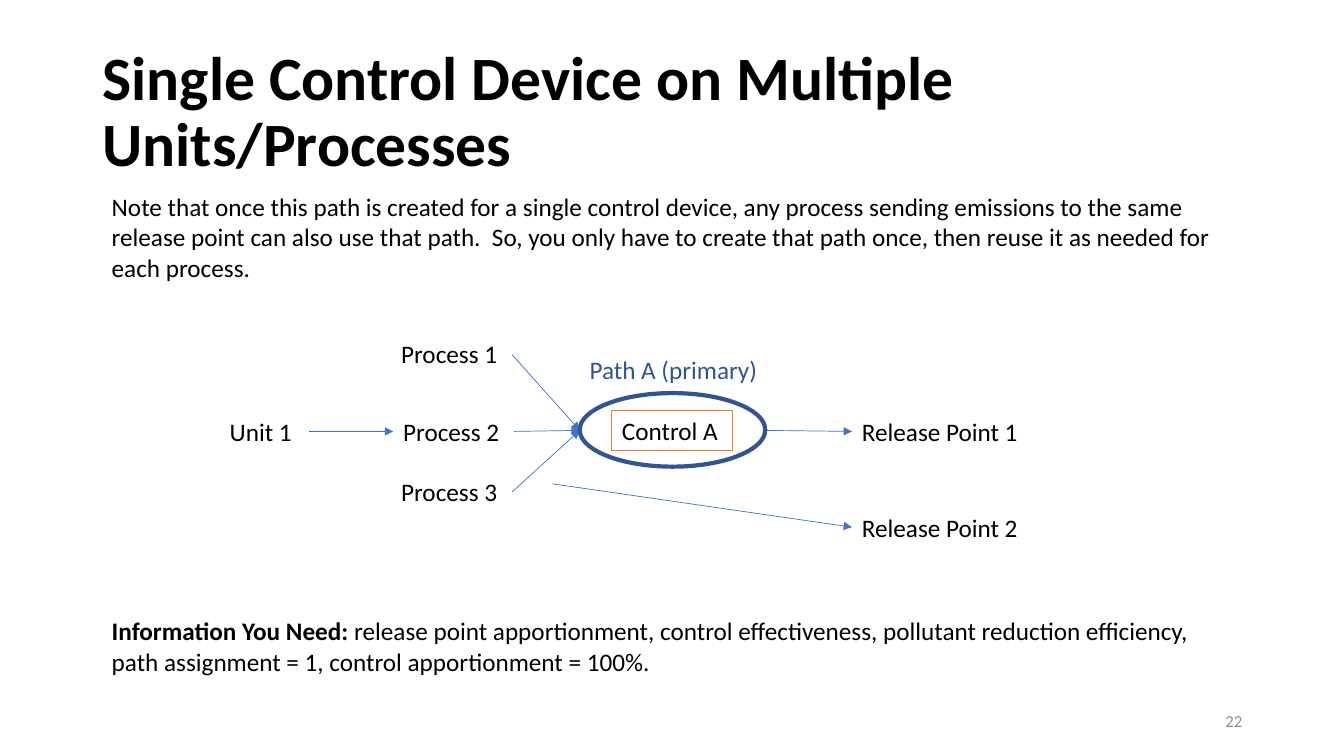
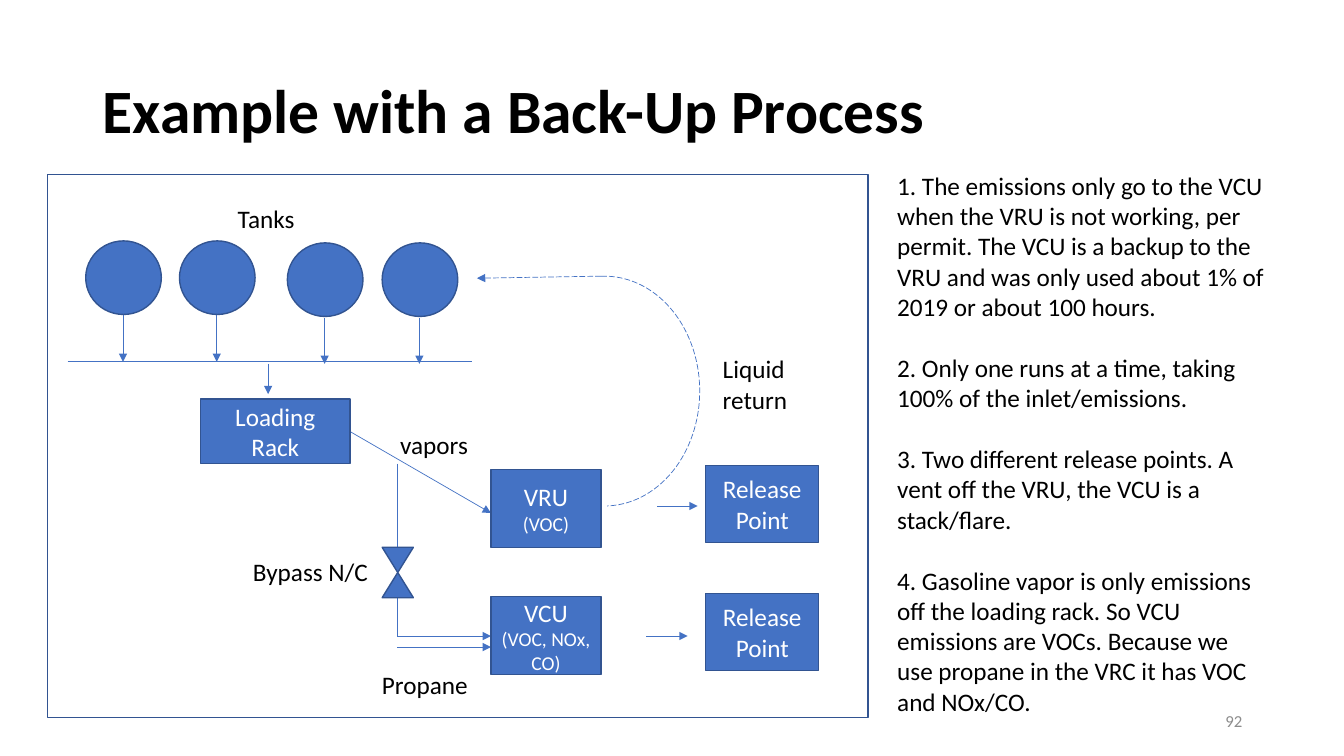
"""Build two slides on emission control paths and a back-up process."""
from lxml import etree
from pptx import Presentation
from pptx.dml.color import RGBColor
from pptx.enum.dml import MSO_LINE
from pptx.enum.shapes import MSO_CONNECTOR, MSO_SHAPE
from pptx.enum.text import MSO_ANCHOR, PP_ALIGN
from pptx.oxml.ns import qn
from pptx.util import Emu, Pt

BLACK = RGBColor(0x00, 0x00, 0x00)
WHITE = RGBColor(0xFF, 0xFF, 0xFF)
GRAY = RGBColor(0x8C, 0x8C, 0x8C)
BLUE = RGBColor(0x44, 0x72, 0xC4)
NAVY = RGBColor(0x32, 0x54, 0x91)
PATH_BLUE = RGBColor(0x2F, 0x55, 0x97)
ORANGE = RGBColor(0xED, 0x7D, 0x31)

FONT = "Calibri"
BODY = 18
SMALL = 14
LINE_GAP = 22
LABEL_H = 40
TANK_W, TANK_H, TANK_DROP = 75, 73, 46

TITLE_BOX = (92, 40, 1150, 145)
NUMBER_BOX = (942, 695, 300, 40)

CONTROL = {
    "title": "Single Control Device on Multiple Units/Processes",
    "number": "22",
    "notes": [
        ((101, 185, 1121, 101), [[
            ("Note that once this path is created for a single control device, any process "
             "sending emissions to the same release point can also use that path.  So, you only "
             "have to create that path once, then reuse it as needed for each process.", {})]]),
        ((101, 606, 1121, 71), [[
            ("Information You Need: ", {"bold": True}),
            ("release point apportionment, control effectiveness, pollutant reduction "
             "efficiency, path assignment = 1, control apportionment = 100%.", {})]]),
    ],
    "labels": [
        ("Unit 1", 218, 408, 89, BLACK),
        ("Process 1", 388, 331, 121, BLACK),
        ("Process 2", 390, 408, 121, BLACK),
        ("Process 3", 388, 468, 121, BLACK),
        ("Path A (primary)", 575, 347, 187, PATH_BLUE),
        ("Release Point 1", 845, 408, 248, BLACK),
        ("Release Point 2", 845, 503, 248, BLACK),
    ],
    "arrows": [
        (306, 428, 390, 428),
        (508, 352, 575, 427),
        (510, 428, 575, 427),
        (508, 488, 575, 427),
        (759, 427, 845, 428),
        (548, 480, 845, 523),
    ],
}

BACKUP = {
    "title": "Example with a Back-Up Process",
    "number": "92",
    "labels": [
        ("Tanks", 226, 197, 94, BLACK),
        ("vapors", 387, 421, 89, BLACK),
        ("Liquid return", 707, 346, 96, BLACK),
        ("Bypass N/C", 241, 547, 146, BLACK),
        ("Propane", 369, 659, 112, BLACK),
    ],
    "arrows": [
        (266, 361, 266, 391),
        (347, 428, 487, 509),
        (652, 502, 692, 502),
        (394, 631, 487, 631),
        (394, 642, 487, 642),
        (641, 631, 682, 631),
    ],
    "tanks": [(85, 239), (178, 239), (285, 241), (379, 241)],
    "units": [
        ((199, 396, 148, 64), [("Loading Rack", {})]),
        ((487, 466, 109, 77), [("VRU ", {}), ("(VOC)", {"size": Pt(SMALL)})]),
        ((487, 592, 109, 77), [("VCU ", {}), ("(VOC, NOx, CO)", {"size": Pt(SMALL)})]),
        ((700, 462, 112, 76), [("Release Point", {})]),
        ((700, 589, 112, 76), [("Release Point", {})]),
    ],
    "remarks": [
        "1. The emissions only go to the VCU when the VRU is not working, per permit. The VCU is "
        "a backup to the VRU and was only used about 1% of 2019 or about 100 hours.",
        "2. Only one runs at a time, taking 100% of the inlet/emissions.",
        "3. Two different release points. A vent off the VRU, the VCU is a stack/flare.",
        "4. Gasoline vapor is only emissions off the loading rack. So VCU emissions are VOCs. "
        "Because we use propane in the VRC it has VOC and NOx/CO.",
    ],
}


def px(*values):
    return [Emu(v * 9144) for v in values]


def write(s, paragraphs, color=BLACK, size=BODY, anchor=MSO_ANCHOR.TOP, gap=0, **layout):
    tf = s.text_frame
    tf.word_wrap = True
    tf.vertical_anchor = anchor
    for i, runs in enumerate(paragraphs):
        p = tf.add_paragraph() if i else tf.paragraphs[0]
        fmt = {"alignment": PP_ALIGN.LEFT, "space_before": Pt(gap if i else 0), **layout}
        for name, value in fmt.items():
            setattr(p, name, value)
        for text, extra in runs:
            r = p.add_run()
            r.text = text
            r.font.color.rgb = color
            for name, value in {"name": FONT, "size": Pt(size), **extra}.items():
                setattr(r.font, name, value)


def add_text(slide, box, paragraphs, **style):
    write(slide.shapes.add_textbox(*px(*box)), paragraphs, **style)


def add_shape(slide, kind, box, fill=None, line=NAVY, width=1.0):
    s = slide.shapes.add_shape(kind, *px(*box))
    s.shadow.inherit = False
    if fill is None:
        s.fill.background()
    else:
        s.fill.solid()
        s.fill.fore_color.rgb = fill
    s.line.color.rgb = line
    s.line.width = Pt(width)
    return s


def add_line(slide, ends, arrow=True, width=0.5, dash=None):
    c = slide.shapes.add_connector(MSO_CONNECTOR.STRAIGHT, *px(*ends))
    c.line.color.rgb = BLUE
    c.line.width = Pt(width)
    if dash:
        c.line.dash_style = dash
    if arrow:
        etree.SubElement(c.line._get_or_add_ln(), qn("a:tailEnd"), type="triangle")
    etree.SubElement(c._element.spPr, qn("a:effectLst"))


def add_slide(prs, content):
    slide = prs.slides.add_slide(prs.slide_layouts[6])
    add_text(slide, NUMBER_BOX, [[(content["number"], {})]], color=GRAY, size=12,
             anchor=MSO_ANCHOR.MIDDLE, alignment=PP_ALIGN.RIGHT)
    add_text(slide, TITLE_BOX, [[(content["title"], {"bold": True})]], size=44,
             anchor=MSO_ANCHOR.MIDDLE, line_spacing=0.9)
    for text, x, y, w, color in content["labels"]:
        add_text(slide, (x, y, w, LABEL_H), [[(text, {})]], color=color)
    for ends in content["arrows"]:
        add_line(slide, ends)
    return slide


def build_control(prs):
    slide = add_slide(prs, CONTROL)
    for box, paragraphs in CONTROL["notes"]:
        add_text(slide, box, paragraphs)
    control = add_shape(slide, MSO_SHAPE.RECTANGLE, (607, 407, 120, 40), line=ORANGE, width=0.75)
    write(control, [[("Control A", {})]])
    add_shape(slide, MSO_SHAPE.OVAL, (575, 390, 184, 73), width=3)


def build_backup(prs):
    slide = add_slide(prs, BACKUP)
    add_shape(slide, MSO_SHAPE.RECTANGLE, (47, 173, 814, 539))
    for x, y in BACKUP["tanks"]:
        add_shape(slide, MSO_SHAPE.OVAL, (x, y, TANK_W, TANK_H), fill=BLUE)
        mid, bottom = x + TANK_W // 2, y + TANK_H + 1
        add_line(slide, (mid, bottom, mid, bottom + TANK_DROP))
    add_line(slide, (67, 359, 468, 359), arrow=False)
    add_line(slide, (394, 460, 394, 631), arrow=False, width=0.75)
    add_shape(slide, MSO_SHAPE.FLOWCHART_COLLATE, (379, 543, 31, 50), fill=BLUE)
    for box, runs in BACKUP["units"]:
        unit = add_shape(slide, MSO_SHAPE.RECTANGLE, box, fill=BLUE)
        write(unit, [runs], color=WHITE, anchor=MSO_ANCHOR.MIDDLE, alignment=PP_ALIGN.CENTER)
    arc = add_shape(slide, MSO_SHAPE.ARC, (505, 274, 189, 228), line=BLUE, width=0.5)
    arc.adjustments[0], arc.adjustments[1] = 161.02, 53.2
    arc.line.dash_style = MSO_LINE.LONG_DASH
    add_line(slide, (596, 274, 473, 276), dash=MSO_LINE.LONG_DASH)
    add_text(slide, (880, 164, 389, 586), [[(text, {})] for text in BACKUP["remarks"]],
             gap=LINE_GAP)


def main():
    prs = Presentation()
    prs.slide_width, prs.slide_height = px(1333, 750)
    build_control(prs)
    build_backup(prs)
    prs.save("out.pptx")


if __name__ == "__main__":
    main()
